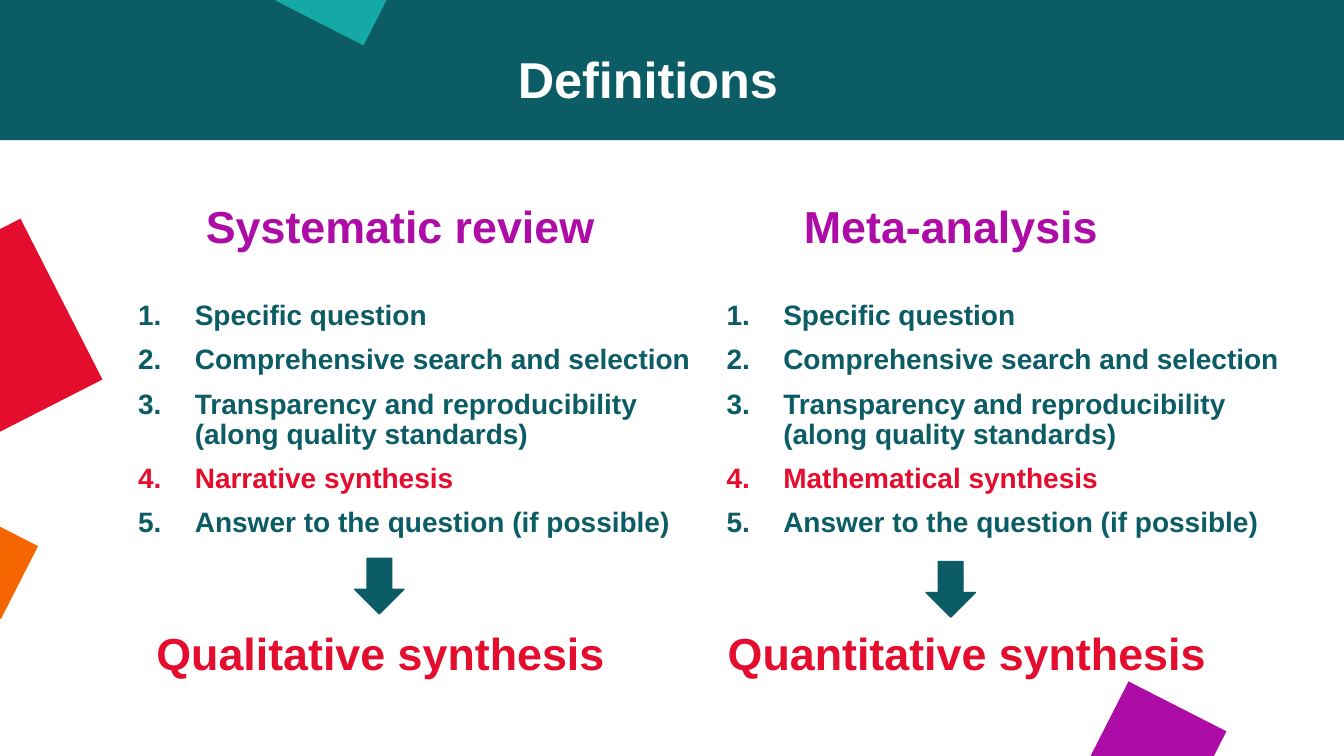
from lxml import etree
from pptx import Presentation, util as u
from pptx.dml import color
from pptx.enum import shapes, text
from pptx.oxml import ns

TITLE = "Definitions"
COLORS = {"teal": "0C5C65", "red": "E50D2E", "purple": "AD0DA6",
          "orange": "F56600", "aqua": "15A9A6", "white": "FFFFFF"}
FONT = "Arial"
SQUARES = [
    ("red", -2.77, 6.3, 4.57, 4.55, 333),
    ("purple", 27.66, 17.65, 2.77, 2.77, 27),
    ("orange", -1.55, 13.16, 2.16, 2.06, 27),
    ("aqua", 7.39, -1.85, 2.49, 2.57, 27),
]
COLUMNS = [
    {"heading": ("Systematic review", 2.24, 15.7),
     "synthesis": "Narrative synthesis", "steps": (3.23, 15.06),
     "arrow": (8.94, 14.07),
     "result": ("Qualitative synthesis", 3.23, 12.73)},
    {"heading": ("Meta-analysis", 18.82, 10.29),
     "synthesis": "Mathematical synthesis", "steps": (18.06, 14.91),
     "arrow": (23.34, 14.15),
     "result": ("Quantitative synthesis", 16.94, 14.86)},
]
STEPS_BEFORE = ["Specific question", "Comprehensive search and selection",
                "Transparency and reproducibility\v(along quality standards)"]
LAST_STEP = "Answer to the question (if possible)"
HEADING_TOP, STEPS_TOP, RESULT_TOP = 5.03, 7.47, 15.8
STEP_INDENT = 1.43


def rgb(name):
    return color.RGBColor.from_string(COLORS[name])


def place(shape, left, top, width, height):
    shape.left, shape.top = u.Cm(left), u.Cm(top)
    shape.width, shape.height = u.Cm(width), u.Cm(height)


def add_solid(slide, kind, fill, left, top, width, height):
    shape = slide.shapes.add_shape(kind, u.Cm(left), u.Cm(top), u.Cm(width), u.Cm(height))
    shape.shadow.inherit = False
    shape.fill.solid()
    shape.fill.fore_color.rgb = rgb(fill)
    shape.line.fill.background()
    return shape


def add_words(paragraph, words, size, fill):
    for index, line in enumerate(words.split("\v")):
        if index:
            paragraph.add_line_break()
        run = paragraph.add_run()
        run.text = line
        run.font.name, run.font.size, run.font.bold = FONT, u.Pt(size), True
        run.font.color.rgb = rgb(fill)


def add_text_box(slide, left, top, width, height):
    box = slide.shapes.add_textbox(u.Cm(left), u.Cm(top), u.Cm(width), u.Cm(height))
    box.text_frame.word_wrap = True
    return box.text_frame


def add_label(slide, label, top, fill):
    words, left, width = label
    paragraph = add_text_box(slide, left, top, width, 1.4).paragraphs[0]
    paragraph.alignment = text.PP_ALIGN.CENTER
    paragraph.line_spacing = 0.9
    add_words(paragraph, words, 32, fill)


def number(paragraph):
    properties = paragraph._p.get_or_add_pPr()
    properties.set("marL", str(u.Cm(STEP_INDENT)))
    properties.set("indent", str(-u.Cm(STEP_INDENT)))
    etree.SubElement(properties, ns.qn("a:buFont"), typeface="+mj-lt")
    etree.SubElement(properties, ns.qn("a:buAutoNum"), type="arabicPeriod")


def add_steps(slide, column):
    left, width = column["steps"]
    frame = add_text_box(slide, left, STEPS_TOP, width, 6.4)
    steps = STEPS_BEFORE + [column["synthesis"], LAST_STEP]
    for index, step in enumerate(steps):
        paragraph = frame.add_paragraph() if index else frame.paragraphs[0]
        number(paragraph)
        paragraph.line_spacing = 0.9
        paragraph.space_before = u.Pt(10 if index else 0)
        add_words(paragraph, step, 20, "red" if step == column["synthesis"] else "teal")


def add_title(slide):
    title = slide.shapes.title
    place(title, 6.32, 1.09, 20.02, 3)
    slide.shapes._spTree.append(title._element)
    frame = title.text_frame
    frame.auto_size = text.MSO_AUTO_SIZE.NONE
    frame.vertical_anchor = text.MSO_ANCHOR.TOP
    frame.paragraphs[0].alignment = text.PP_ALIGN.CENTER
    add_words(frame.paragraphs[0], TITLE, 36, "white")


def main():
    presentation = Presentation()
    presentation.slide_width, presentation.slide_height = u.Cm(33.87), u.Cm(19.05)
    slide = presentation.slides.add_slide(presentation.slide_layouts[5])
    kinds = shapes.MSO_SHAPE
    add_solid(slide, kinds.RECTANGLE, "teal", 0, 0, 33.87, 3.53)
    for fill, left, top, width, height, angle in SQUARES:
        square = add_solid(slide, kinds.RECTANGLE, fill, left, top, width, height)
        square.rotation = angle
    for column in COLUMNS:
        add_label(slide, column["heading"], HEADING_TOP, "purple")
        add_steps(slide, column)
        arrow = add_solid(slide, kinds.DOWN_ARROW, "teal", *column["arrow"], 1.24, 1.4)
        arrow.line.color.rgb = rgb("teal")
        arrow.line.width = u.Pt(1)
        add_label(slide, column["result"], RESULT_TOP, "red")
    add_title(slide)
    presentation.save("out.pptx")


if __name__ == "__main__":
    main()
